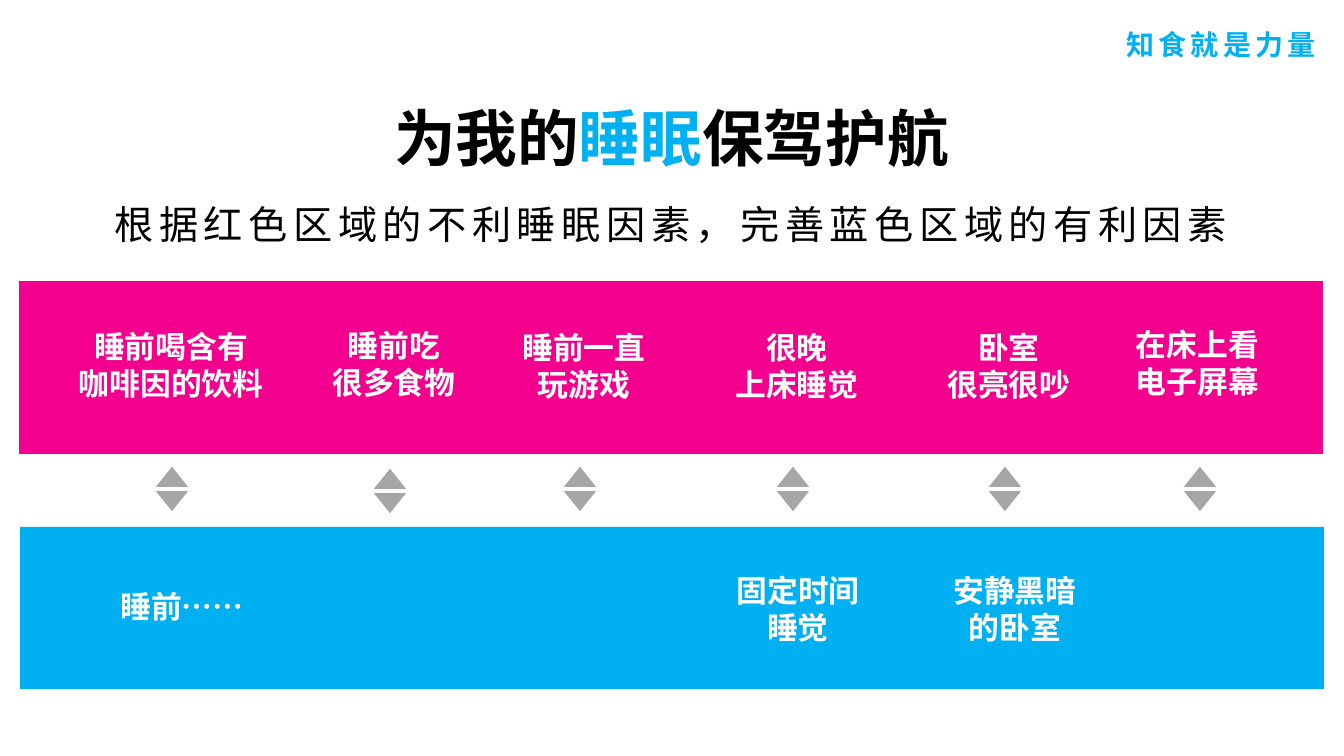
from lxml import etree
from pptx import Presentation
from pptx import util as u
from pptx.dml.color import RGBColor
from pptx.enum import shapes, text
from pptx.oxml import ns

SCALE = 914400 / 100.8  # EMU per px
FONT = "Noto Sans CJK SC"
BLUE, PINK, GREY, WHITE, BLACK = "00B0F0", "F3018E", "A6A6A6", "FFFFFF", "000000"


def px(length):
    return u.Emu(round(length * SCALE))


def color(value):
    return RGBColor.from_string(value)


def add_text(page, box, paragraphs, size=22, fill=WHITE, bold=True, tracking=0,
             align=text.PP_ALIGN.CENTER, inset=(10, 5), middle=False,
             line_spacing=None, after=None):
    """Each paragraph is a list of words or (words, colour) pairs."""
    frame = page.shapes.add_textbox(*map(px, box)).text_frame
    frame.word_wrap = True
    frame.margin_left = frame.margin_right = px(inset[0])
    frame.margin_top = frame.margin_bottom = px(inset[1])
    if middle:
        frame.vertical_anchor = text.MSO_ANCHOR.MIDDLE
    else:
        frame.auto_size = text.MSO_AUTO_SIZE.SHAPE_TO_FIT_TEXT
    for index, pieces in enumerate(paragraphs):
        para = frame.add_paragraph() if index else frame.paragraphs[0]
        para.alignment = align
        para.line_spacing = line_spacing
        if after is not None:
            para.space_after = u.Pt(after)
        for piece in pieces:
            words, shade = piece if isinstance(piece, tuple) else (piece, fill)
            span = para.add_run()
            span.text = words
            span.font.name = FONT
            span.font.size = u.Pt(size)
            span.font.bold = bold
            span.font.color.rgb = color(shade)
            properties = span.font._element
            if tracking:
                properties.set("spc", str(tracking * 100))
            etree.SubElement(properties, ns.qn("a:ea")).set("typeface", FONT)


def add_block(page, kind, box, fill, outline=None):
    shape = page.shapes.add_shape(kind, *map(px, box))
    shape.shadow.inherit = False
    shape.fill.solid()
    shape.fill.fore_color.rgb = color(fill)
    if outline:
        shape.line.color.rgb = color(outline)
        shape.line.width = u.Pt(2.25)
    else:
        shape.line.fill.background()


def add_heading(page, box):
    left, top, width, height = box
    add_text(page, (left + width - 256, top, 266, 44), [["知食就是力量"]],
             size=20, fill=BLUE, tracking=3)
    add_text(page, (left + 275, top + 47, 793, 146),
             [["为我的", ("睡眠", BLUE), "保驾护航"]],
             size=44, fill=BLACK, middle=True, line_spacing=0.9, after=6)
    add_text(page, (left + 28, top + 173, 1286, 57),
             [["根据红色区域的不利睡眠因素，完善蓝色区域的有利因素"]],
             size=28, fill=BLACK, bold=False, tracking=4)


def add_band(page, box, fill, labels, inset):
    """Labels are (centre x, y, width, lines, alignment), offset from the band."""
    left, top, width, height = box
    add_block(page, shapes.MSO_SHAPE.RECTANGLE, box, fill)
    for centre, offset, label_width, lines, align in labels:
        place = (left + centre - label_width / 2, top + offset,
                 label_width, 37 * len(lines) + 2 * inset[1])
        add_text(page, place, [[line] for line in lines], align=align, inset=inset)


def add_arrows(page, box, marks):
    left, top, width, height = box
    for centre, offset in marks:
        add_block(page, shapes.MSO_SHAPE.FLOWCHART_SORT,
                  (left + centre - 20, top + offset, 40, height), GREY, WHITE)


def main():
    deck = Presentation()
    deck.slide_width, deck.slide_height = px(1344), px(756)
    page = deck.slides.add_slide(deck.slide_layouts[6])
    centred, flush = text.PP_ALIGN.CENTER, text.PP_ALIGN.LEFT

    # Corner motto, title and instruction
    add_heading(page, (0, 22, 1344, 230))

    # Habits that harm sleep
    add_band(page, (19, 281, 1304, 173), PINK, [
        (152, 42, 236, ["睡前喝含有", "咖啡因的饮料"], centred),
        (375, 41, 164, ["睡前吃", "很多食物"], centred),
        (565, 43, 164, ["睡前一直", "玩游戏"], centred),
        (778, 43, 164, ["很晚", "上床睡觉"], centred),
        (990, 43, 164, ["卧室", "很亮很吵"], centred),
        (1189, 40, 164, ["在床上看", "电子屏幕"], flush),
    ], inset=(10, 5))

    # Two-way arrows between the bands
    add_arrows(page, (0, 464, 1344, 50),
               [(172, 0), (390, 2), (580, 0), (793, 0), (1005, 0), (1200, 0)])

    # Habits that help sleep
    add_band(page, (20, 527, 1304, 162), BLUE, [
        (162, 53, 260, ["睡前……"], centred),
        (778, 37, 153, ["固定时间睡觉"], centred),
        (995, 37, 187, ["安静黑暗", "的卧室"], centred),
    ], inset=(12, 8))

    deck.save("out.pptx")


if __name__ == "__main__":
    main()
